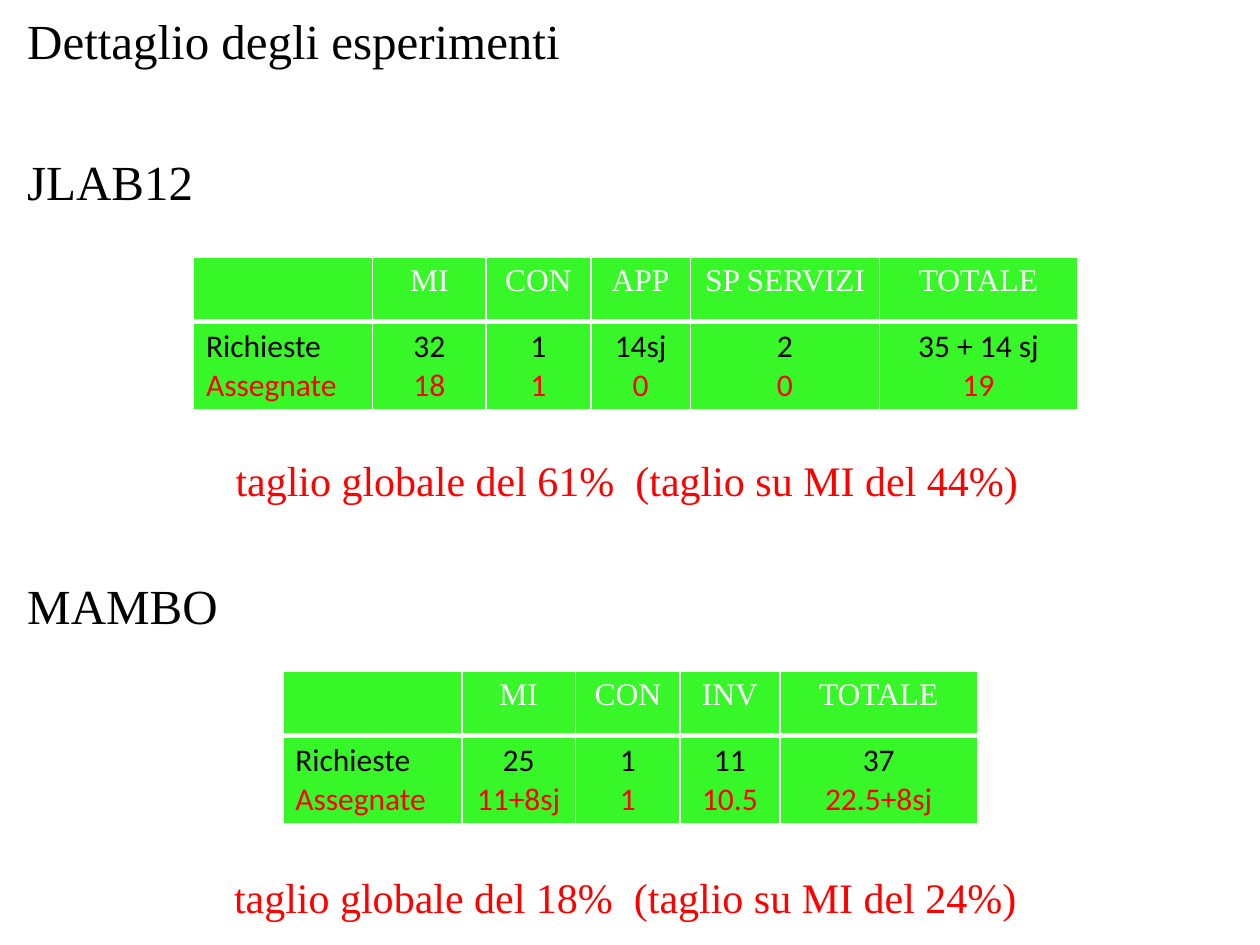
from lxml import etree
from pptx import Presentation
from pptx import util as u
from pptx.dml import color
from pptx.enum import text
from pptx.oxml import ns

COLOURS = {"black": "000000", "red": "FF0000", "white": "FFFFFF", "green": "38F729"}
SERIF, SANS = "Times New Roman", "Calibri"


def write(frame, lines, size=18, font=SERIF, colours=("black",), align=text.PP_ALIGN.LEFT):
    """Write one paragraph per line, each with its own colour."""
    for index, (line, colour) in enumerate(zip(lines, colours)):
        para = frame.paragraphs[0] if index == 0 else frame.add_paragraph()
        para.alignment = align
        span = para.add_run()
        span.text = line
        span.font.size = u.Pt(size)
        span.font.name = font
        span.font.color.rgb = color.RGBColor.from_string(COLOURS[colour])


def add_border(cell, side, points):
    """Draw a white line on one side (L, R, T or B) of a cell."""
    props = cell._tc.get_or_add_tcPr()
    line = etree.SubElement(props, ns.qn(f"a:ln{side}"), w=str(u.Pt(points)))
    fill = etree.SubElement(line, ns.qn("a:solidFill"))
    etree.SubElement(fill, ns.qn("a:srgbClr"), val=COLOURS["white"])


deck = Presentation()
deck.slide_width, deck.slide_height = u.Cm(25.4), u.Cm(19.05)
page = deck.slides.add_slide(deck.slide_layouts[6])

# Headings and comments: left, top, width, height, size, colour, wording
labels = [
    (0.3, 0.08, 11.61, 1.45, 28, "black", "Dettaglio degli esperimenti"),
    (0.3, 2.92, 3.89, 1.45, 28, "black", "JLAB12"),
    (4.5, 9.04, 16.43, 1.27, 24, "red", "taglio globale del 61%  (taglio su MI del 44%)"),
    (0.3, 11.48, 4.39, 1.45, 28, "black", "MAMBO"),
    (4.47, 17.45, 16.43, 1.27, 24, "red", "taglio globale del 18%  (taglio su MI del 24%)"),
]
for left, top, width, height, size, colour, wording in labels:
    box = page.shapes.add_textbox(u.Cm(left), u.Cm(top), u.Cm(width), u.Cm(height))
    box.fill.solid()
    box.fill.fore_color.rgb = color.RGBColor.from_string(COLOURS["white"])
    box.text_frame.word_wrap = False
    box.text_frame.auto_size = text.MSO_AUTO_SIZE.SHAPE_TO_FIT_TEXT
    write(box.text_frame, [wording], size=size, colours=[colour])

# Experiment tables: left, top, then columns of heading, width, requested, assigned
row_heights = (1.3, 1.78)
row_names = ("", 3.61, "Richieste", "Assegnate")
experiments = [
    (3.9, 5.18, [
        row_names,
        ("MI", 2.29, "32", "18"),
        ("CON", 2.11, "1", "1"),
        ("APP", 2.01, "14sj", "0"),
        ("SP SERVIZI", 3.81, "2", "0"),
        ("TOTALE", 3.99, "35 + 14 sj", "19"),
    ]),
    (5.7, 13.53, [
        row_names,
        ("MI", 2.29, "25", "11+8sj"),
        ("CON", 2.11, "1", "1"),
        ("INV", 2.01, "11", "10.5"),
        ("TOTALE", 3.99, "37", "22.5+8sj"),
    ]),
]
for left, top, columns in experiments:
    total_width = sum(column[1] for column in columns)
    table = page.shapes.add_table(2, len(columns), u.Cm(left), u.Cm(top),
                                  u.Cm(total_width), u.Cm(sum(row_heights))).table
    for row, height in zip(table.rows, row_heights):
        row.height = u.Cm(height)
    for index, (heading, width, requested, assigned) in enumerate(columns):
        table.columns[index].width = u.Cm(width)
        header, body = table.cell(0, index), table.cell(1, index)

        # White grid, with a thick rule under the header
        for cell, thick_side in ((header, "B"), (body, "T")):
            for side in "LRTB":
                add_border(cell, side, 3 if side == thick_side else 1)
            cell.fill.solid()
            cell.fill.fore_color.rgb = color.RGBColor.from_string(COLOURS["green"])

        if heading:
            write(header.text_frame, [heading], colours=["white"], align=text.PP_ALIGN.CENTER)
        write(body.text_frame, [requested, assigned], font=SANS, colours=["black", "red"],
              align=text.PP_ALIGN.CENTER if index else text.PP_ALIGN.LEFT)

deck.save("out.pptx")
